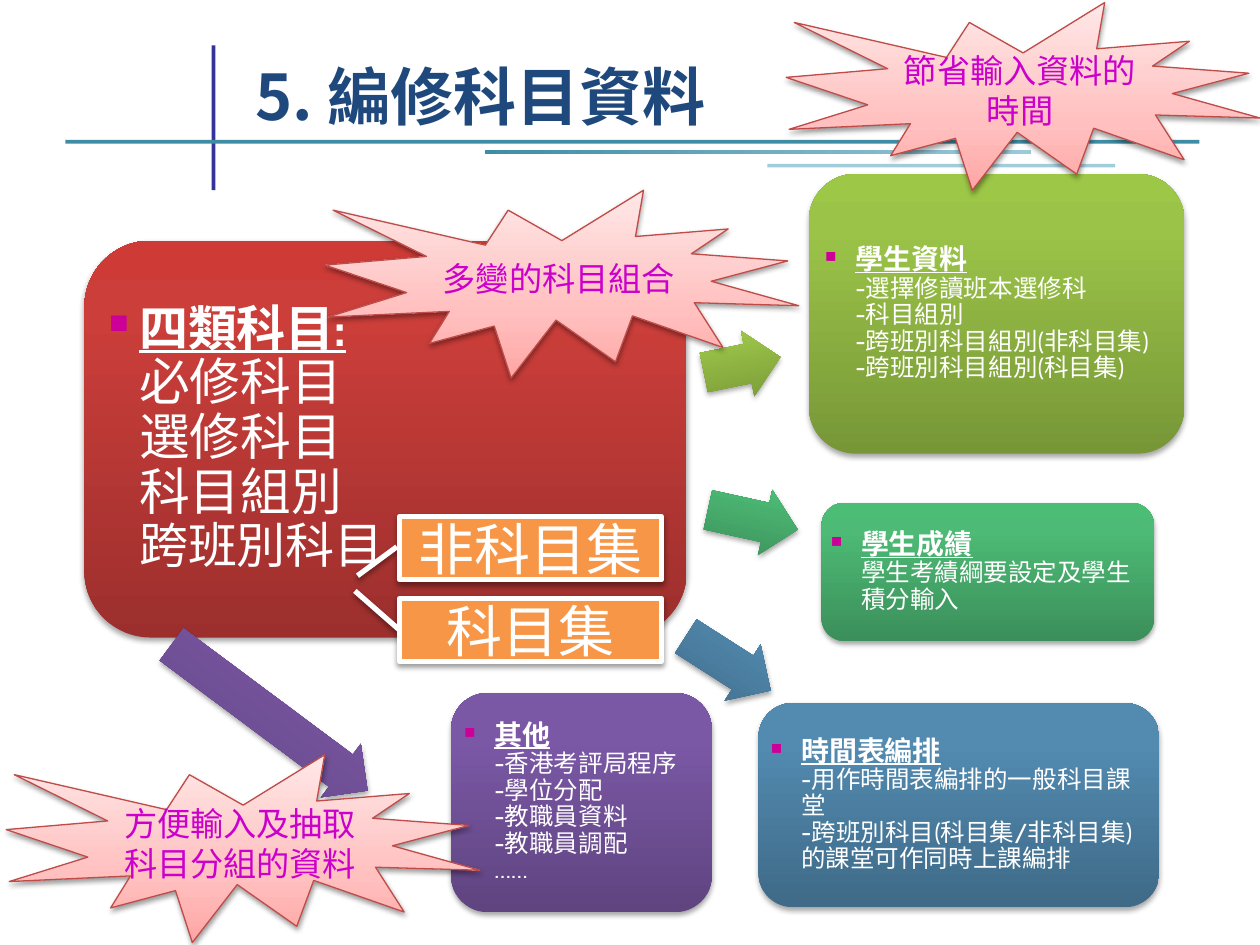
"""Builds the slide on editing subject data."""
from copy import deepcopy
from dataclasses import dataclass

from lxml import etree
from pptx import Presentation
from pptx.dml.color import RGBColor
from pptx.enum.shapes import MSO_SHAPE
from pptx.enum.text import MSO_ANCHOR, PP_ALIGN
from pptx.oxml.ns import qn
from pptx.util import Inches, Pt

RECT, ROUND = MSO_SHAPE.RECTANGLE, MSO_SHAPE.ROUNDED_RECTANGLE
ARROW, BURST = MSO_SHAPE.RIGHT_ARROW, MSO_SHAPE.EXPLOSION1
CALLOUT = MSO_SHAPE.LINE_CALLOUT_1
MIDDLE, BOTTOM = MSO_ANCHOR.MIDDLE, MSO_ANCHOR.BOTTOM
LEFT, CENTER = PP_ALIGN.LEFT, PP_ALIGN.CENTER
COLUMNS, ROWS = 100, 75
TITLE_ONLY = 5


@dataclass(frozen=True)
class Theme:
    title: str = "1F497D"
    white: str = "FFFFFF"
    navy: str = "333399"
    teal: str = "3F8DA5"
    mist: str = "9BCAD9"
    pale: str = "A1CDDB"
    bullet: str = "CC0099"
    burst_text: str = "CC00CC"
    burst_edge: str = "BF4C48"
    orange: str = "F79646"
    red: tuple = ((0, "9C2F2D"), (80, "CB3E3A"), (100, "CE3B37"))
    lime: tuple = ((0, "779737"), (80, "9BC348"), (100, "9DC746"))
    green: tuple = ((0, "3B8F5A"), (80, "4DBA75"), (100, "4BBD75"))
    blue: tuple = ((0, "3F6A88"), (80, "528AB0"), (100, "518BB3"))
    purple: tuple = ((0, "5F4480"), (80, "7B58A6"), (100, "7C57A8"))
    pink: tuple = ((0, "FFA6A5"), (35, "FFC0BF"), (100, "FFE7E7"))
    title_font: str = "Noto Sans CJK TC"
    panel_font: str = "Cabin"
    label_font: str = "Noto Sans CJK SC"
    title_size: int = 36
    label_size: int = 32
    main_size: int = 28
    main_list_size: int = 29
    burst_size: int = 19
    head_size: int = 16
    body_size: int = 14


def write(paragraph, text, *, size, color, font, bold=False, underline=False):
    """Append text to a paragraph, turning newlines into line breaks."""
    for number, line in enumerate(text.split("\n")):
        if number:
            paragraph.add_line_break()
        run = paragraph.add_run()
        run.text = line
        run.font.size, run.font.name = Pt(size), font
        run.font.bold, run.font.underline = bold, underline
        run.font.color.rgb = RGBColor.from_string(color)
        properties = run.font._element
        etree.SubElement(properties, qn("a:ea")).set("typeface", font)
        if number:
            run._r.getprevious().append(deepcopy(properties))


class Board:
    """Holds the theme and the current slide."""

    def __init__(self, deck, theme):
        self.theme = theme
        self.column = deck.slide_width / COLUMNS
        self.row = deck.slide_height / ROWS
        self.slide = deck.slides.add_slide(deck.slide_layouts[TITLE_ONLY])

    def box(self, left, top, width, height):
        """Turn grid units into lengths."""
        return [round(value * unit) for value, unit in zip(
            (left, top, width, height), (self.column, self.row) * 2)]

    def frame(self, shape, anchor, align, inset=None):
        """Set up a shape's text frame and return its first paragraph."""
        frame = shape.text_frame
        frame.word_wrap, frame.vertical_anchor = True, anchor
        if inset is not None:
            frame.margin_left = frame.margin_right = Inches(inset)
            frame.margin_top = frame.margin_bottom = Inches(inset)
        paragraph = frame.paragraphs[0]
        paragraph.alignment = align
        return paragraph

    def title(self, text, area):
        """Place and fill the title placeholder."""
        title, theme = self.slide.shapes.title, self.theme
        title.left, title.top, title.width, title.height = self.box(*area)
        write(self.frame(title, BOTTOM, LEFT), text, size=theme.title_size,
              color=theme.title, font=theme.title_font, bold=True)

    def shape(self, kind, area, fill, angle=90, line=None, weight=1,
              shadow=None, adjust=(), turn=0):
        """Draw a preset shape with a solid or gradient fill."""
        shape = self.slide.shapes.add_shape(kind, *self.box(*area))
        shape.rotation = turn
        for index, value in enumerate(adjust):
            shape.adjustments[index] = value
        if isinstance(fill, str):
            shape.fill.solid()
            shape.fill.fore_color.rgb = RGBColor.from_string(fill)
        else:
            self.gradient(shape, fill, angle)
        if line:
            shape.line.color.rgb = RGBColor.from_string(line)
            shape.line.width = Pt(weight)
        else:
            shape.line.fill.background()
        shape.shadow.inherit = False
        if shadow:
            self.shadow(shape, *shadow)
        return shape

    def gradient(self, shape, stops, angle):
        """Fill a shape with a linear gradient."""
        shape.fill.gradient()
        shape.fill.gradient_angle = angle
        holder = shape._element.spPr.find(".//" + qn("a:gsLst"))
        while len(holder) < len(stops):
            holder.append(deepcopy(holder[0]))
        for stop, (position, color) in zip(shape.fill.gradient_stops, stops):
            stop.position = position / 100
            stop.color.rgb = RGBColor.from_string(color)

    def shadow(self, shape, opacity, distance):
        """Add a soft shadow below a shape."""
        effects = shape._element.spPr.find(qn("a:effectLst"))
        outer = etree.SubElement(
            effects, qn("a:outerShdw"), blurRad=str(Pt(3.1)),
            dist=str(Pt(distance)), dir="5400000", rotWithShape="0")
        color = etree.SubElement(outer, qn("a:srgbClr"), val="000000")
        etree.SubElement(color, qn("a:alpha"), val=str(opacity * 1000))

    def panel(self, area, fill, parts, inset=0.02):
        """Draw a rounded panel with one bulleted paragraph."""
        panel = self.shape(ROUND, area, fill, shadow=(35, 1.8))
        paragraph = self.frame(panel, MIDDLE, LEFT, inset)
        paragraph.line_spacing = 0.9
        properties = paragraph._p.get_or_add_pPr()
        properties.set("marL", str(Inches(0.24)))
        properties.set("indent", str(-Inches(0.24)))
        color = etree.SubElement(properties, qn("a:buClr"))
        etree.SubElement(color, qn("a:srgbClr"), val=self.theme.bullet)
        etree.SubElement(properties, qn("a:buSzPct"), val="55000")
        etree.SubElement(properties, qn("a:buChar"), char="■")
        for index, (text, size) in enumerate(parts):
            write(paragraph, text, size=size, color=self.theme.white,
                  font=self.theme.panel_font, bold=index == 0, underline=index == 0)

    def topic(self, area, fill, heading, body):
        """Draw a panel with a heading and details."""
        self.panel(area, fill, [(heading + "\n", self.theme.head_size),
                                (body, self.theme.body_size)])

    def arrow(self, area, fill, turn):
        """Draw a turned block arrow."""
        self.shape(ARROW, area, fill, shadow=(35, 1.8), adjust=(0.6, 0.5), turn=turn)

    def label(self, shape, text, size, color):
        """Centre a label in a shape."""
        write(self.frame(shape, MIDDLE, CENTER), text, size=size, color=color,
              font=self.theme.label_font)

    def callout(self, top, text, adjust):
        """Draw a bordered label with a leader line."""
        theme = self.theme
        shape = self.shape(CALLOUT, (31.7, top, 20.8, 5), theme.orange,
                           line=theme.white, weight=3, shadow=(38, 1.6), adjust=adjust)
        self.label(shape, text, theme.label_size, theme.white)

    def burst(self, left, top, text):
        """Draw a starburst remark."""
        theme = self.theme
        shape = self.shape(BURST, (left, top, 37.6, 14.9), theme.pink,
                           line=theme.burst_edge, weight=0.75, shadow=(38, 1.6))
        self.label(shape, text, theme.burst_size, theme.burst_text)


def main():
    """Build and save the slide."""
    deck, theme = Presentation(), Theme()
    deck.slide_width, deck.slide_height = Inches(10), Inches(7.5)
    board = Board(deck, theme)
    board.shape(RECT, (16.8, 3.6, 0.3, 11.5), theme.navy)
    board.shape(RECT, (5.2, 11.1, 90, 0.3), theme.teal)
    board.shape(RECT, (38.5, 11.9, 43.3, 0.3),
                ((0, theme.teal), (100, theme.mist)), angle=0)
    board.shape(RECT, (60.9, 13, 27.6, 0.3), theme.pale)
    board.title("5. 編修科目資料", (19.3, 2.8, 78.3, 8.3))

    board.panel((6.7, 19.1, 47.8, 31.5), theme.red, [
        ("四類科目:\n", theme.main_size),
        ("必修科目\n選修科目\n科目組別\n", theme.main_list_size),
        ("跨班別科目", theme.main_size)], inset=0.04)
    board.arrow((55.8, 26.3, 6.2, 5.3), theme.lime, 348.5)
    board.topic((64.2, 13.8, 29.8, 22.2), theme.lime, "學生資料",
                "-選擇修讀班本選修科\n-科目組別\n-跨班別科目組別(非科目集)\n-跨班別科目組別(科目集)")
    board.arrow((56.1, 38.6, 7.3, 5.3), theme.green, 12.4)
    board.topic((65.2, 39.9, 26.4, 11), theme.green, "學生成績",
                "學生考績綱要設定及學生積分輸入")
    board.arrow((53.8, 50, 8, 5.3), theme.blue, 32.6)
    board.topic((60.2, 55.8, 31.8, 16.2), theme.blue, "時間表編排",
                "-用作時間表編排的一般科目課堂\n-跨班別科目(科目集/非科目集)的課堂可作同時上課編排")
    board.arrow((11.7, 54.3, 19.4, 5.3), theme.purple, 36.7)
    board.topic((35.8, 55, 20.7, 17.4), theme.purple, "其他",
                "-香港考評局程序\n-學位分配\n-教職員資料\n-教職員調配\n……")

    board.callout(47.5, "科目集", (0.5, 0, -0.12, -0.17))
    board.callout(41, "非科目集", (0.48, -0.01, 0.94, -0.16))
    board.burst(25.8, 15.1, "多變的科目組合")
    board.burst(62.4, 0.2, "節省輸入資料的時間")
    board.burst(0.5, 59.9, "方便輸入及抽取科目分組的資料")
    deck.save("out.pptx")


if __name__ == "__main__":
    main()
